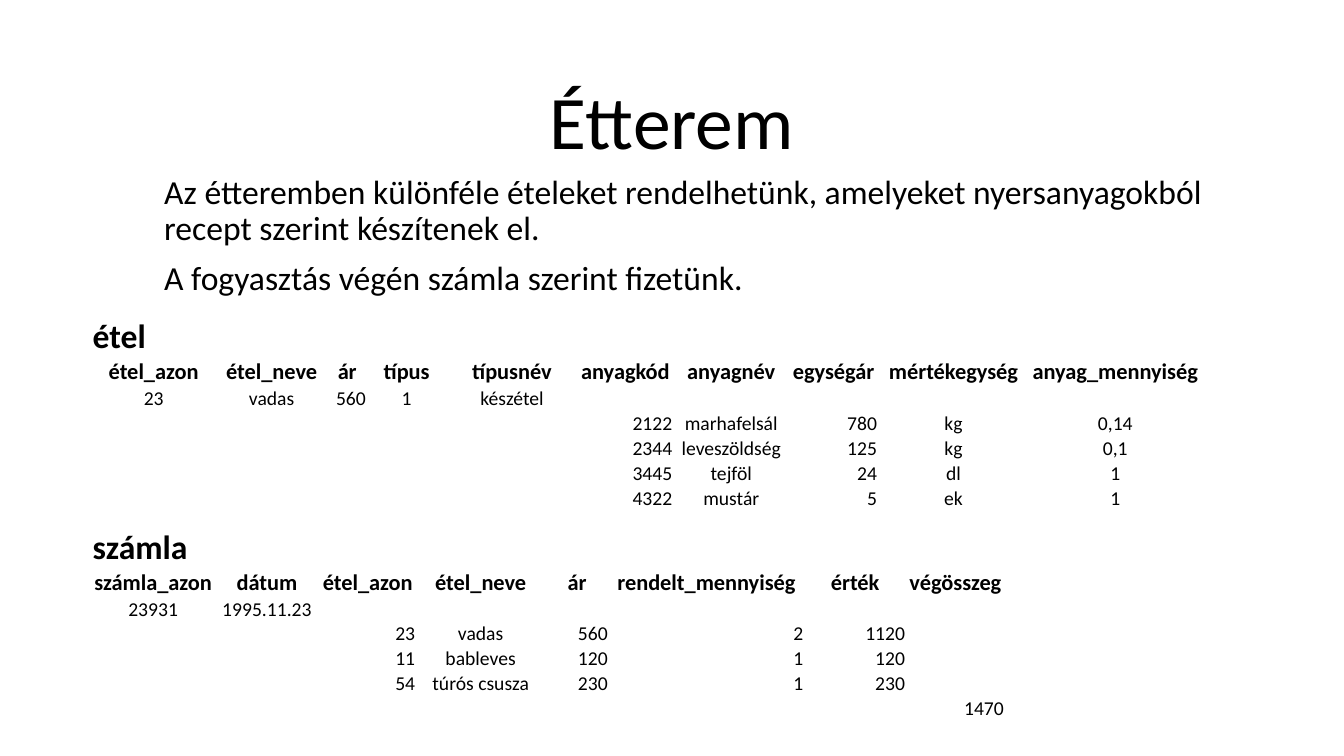
from lxml.etree import SubElement
from pptx import Presentation
from pptx.dml.color import RGBColor
from pptx.enum.text import MSO_ANCHOR as Anchor, PP_ALIGN as Align
from pptx.oxml.ns import qn
from pptx.util import Pt

BLACK = RGBColor(0, 0, 0)
WHITE = RGBColor(255, 255, 255)
FONT = "Calibri"

# Content
TITLE = "Étterem"
INTRO = [
    "Az étteremben különféle ételeket rendelhetünk, amelyeket nyersanyagokból "
    "recept szerint készítenek el.",
    "A fogyasztás végén számla szerint fizetünk.",
]

# Each column: heading, width, alignment of its values
DISH = {
    "name": "étel",
    "top": 225.4,
    "columns": [
        ("étel_azon", 88.6, "c"), ("étel_neve", 79.9, "c"), ("ár", 28.1, "r"),
        ("típus", 56.9, "c"), ("típusnév", 93.6, "c"), ("anyagkód", 68.4, "r"),
        ("anyagnév", 82.8, "c"), ("egységár", 63.4, "r"),
        ("mértékegység", 108, "c"), ("anyag_mennyiség", 123.1, "c"),
    ],
    # Each row: first column used, then its values
    "rows": [
        (0, ["23", "vadas", "560", "1", "készétel"]),
        (5, ["2122", "marhafelsál", "780", "kg", "0,14"]),
        (5, ["2344", "leveszöldség", "125", "kg", "0,1"]),
        (5, ["3445", "tejföl", "24", "dl", "1"]),
        (5, ["4322", "mustár", "5", "ek", "1"]),
    ],
}
BILL = {
    "name": "számla",
    "top": 375.8,
    "columns": [
        ("számla_azon", 87.8, "c"), ("dátum", 74.9, "c"), ("étel_azon", 69.1, "r"),
        ("étel_neve", 92.2, "c"), ("ár", 45.4, "r"), ("rendelt_mennyiség", 139.7, "r"),
        ("érték", 72.7, "r"), ("végösszeg", 70.6, "r"),
    ],
    "rows": [
        (0, ["23931", "1995.11.23"]),
        (2, ["23", "vadas", "560", "2", "1120"]),
        (2, ["11", "bableves", "120", "1", "120"]),
        (2, ["54", "túrós csusza", "230", "1", "230"]),
        (7, ["1470"]),
    ],
}
TABLE_LEFT = 65.5
NAME_HEIGHT, HEADING_HEIGHT, VALUE_HEIGHT = 30, 20.25, 17.8
ALIGNMENTS = {"l": Align.LEFT, "c": Align.CENTER, "r": Align.RIGHT}


def style(paragraph, size, align=Align.LEFT, bold=False):
    paragraph.alignment = align
    font = paragraph.font
    font.name, font.size, font.bold = FONT, Pt(size), bold
    font.color.rgb = BLACK


def place(shape, left, top, width, height):
    shape.left, shape.top = Pt(left), Pt(top)
    shape.width, shape.height = Pt(width), Pt(height)


def fill_cell(cell, text, size, align, bold):
    cell.fill.solid()
    cell.fill.fore_color.rgb = WHITE
    cell.vertical_anchor = Anchor.BOTTOM
    cell.margin_left = cell.margin_right = cell.margin_top = Pt(0.72)
    cell.margin_bottom = 0
    cell.text = text
    paragraph = cell.text_frame.paragraphs[0]
    style(paragraph, size, ALIGNMENTS[align], bold)
    if not text:  # an empty cell keeps the row low only with its own size
        SubElement(paragraph._p, qn("a:endParaRPr"), sz=str(size * 100))


def add_entity(slide, entity):
    columns = entity["columns"]
    count = len(columns)
    heights = [NAME_HEIGHT, HEADING_HEIGHT] + [VALUE_HEIGHT] * len(entity["rows"])
    frame = slide.shapes.add_table(
        len(heights), count, Pt(TABLE_LEFT), Pt(entity["top"]),
        Pt(sum(width for _, width, _ in columns)), Pt(sum(heights)))
    table = frame.table
    table.first_row = table.horz_banding = False
    for row, height in zip(table.rows, heights):
        row.height = Pt(height)

    # Pad every line to the full width of the table
    lines = [[entity["name"]] + [""] * (count - 1), [heading for heading, _, _ in columns]]
    for start, values in entity["rows"]:
        lines.append([""] * start + values + [""] * (count - start - len(values)))

    for c, (_, width, value_align) in enumerate(columns):
        table.columns[c].width = Pt(width)
        for r, line in enumerate(lines):
            size, align, bold = {0: (24, "l", True), 1: (16, "c", True)}.get(
                r, (14, value_align, False))
            fill_cell(table.cell(r, c), line[c], size, align, bold)


def main():
    prs = Presentation()
    prs.slide_width, prs.slide_height = Pt(960), Pt(540)
    slide = prs.slides.add_slide(prs.slide_layouts[5])

    # Title
    title = slide.shapes.title
    place(title, 120, 51.1, 720, 70.6)
    title.text_frame.text = TITLE
    title.text_frame.vertical_anchor = Anchor.BOTTOM
    heading = title.text_frame.paragraphs[0]
    style(heading, 54, Align.CENTER)
    heading.line_spacing = 0.9

    # Introduction
    intro = slide.shapes.add_textbox(Pt(110.2), Pt(121.7), Pt(757.4), Pt(111.6)).text_frame
    intro.word_wrap = True
    intro.text = "\n".join(INTRO)
    for paragraph in intro.paragraphs:
        style(paragraph, 24)
        paragraph.line_spacing = 0.9
        paragraph.space_before = Pt(10)

    # Tables
    for entity in (DISH, BILL):
        add_entity(slide, entity)

    prs.save("out.pptx")


if __name__ == "__main__":
    main()
